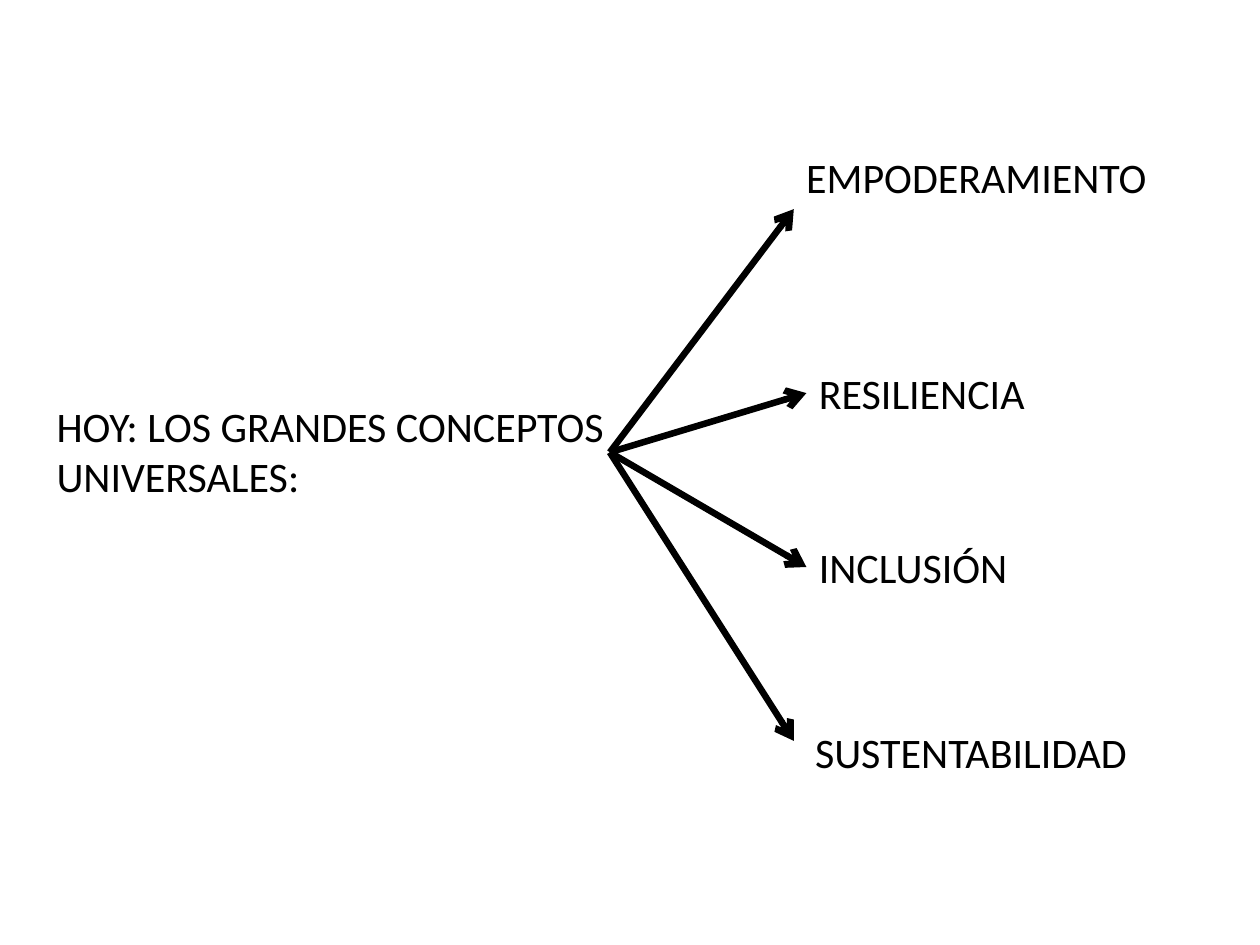
"""Build a slide that links a heading to four universal concepts."""
from pptx import Presentation
from pptx.dml.color import RGBColor
from pptx.enum.shapes import MSO_CONNECTOR as Conn
from pptx.enum.text import MSO_AUTO_SIZE as Fit
from pptx.oxml.ns import qn
from pptx.util import Inches, Pt
from lxml.etree import SubElement as Sub

BLACK = RGBColor(0, 0, 0)
LEFT = 1


class Board:
    def __init__(self, slide):
        self.slide = slide
        self.font = {"name": "Calibri", "size": Pt(24)}
        self.width = Pt(3.75)

    def text(self, words, x, y, w, h, wrap=False):
        box = self.slide.shapes.add_textbox(*map(Inches, (x, y, w, h)))
        frame = box.text_frame
        frame.word_wrap = wrap
        frame.auto_size = Fit.SHAPE_TO_FIT_TEXT
        run = frame.paragraphs[0].add_run()
        run.text = words
        for key, value in self.font.items():
            setattr(run.font, key, value)
        run.font.color.rgb = BLACK
        return box

    def arrow(self, start, end, goal=None):
        line = self.slide.shapes.add_connector(
            Conn.STRAIGHT, *map(Inches, start + end))
        if goal is not None:
            line.end_connect(goal, LEFT)
        line.line.width = self.width
        line.line.color.rgb = BLACK
        Sub(line.line._get_or_add_ln(), qn("a:tailEnd"), type="arrow")
        Sub(line._element.spPr, qn("a:effectLst"))


def main():
    deck = Presentation()
    deck.slide_width, deck.slide_height = Inches(10), Inches(7.5)
    board = Board(deck.slides.add_slide(deck.slide_layouts[6]))
    board.text("HOY: LOS GRANDES CONCEPTOS UNIVERSALES:",
               0.35, 3.13, 4.88, 0.91, wrap=True)
    ideas = [
        ("EMPODERAMIENTO", 6.3, 1.15, 3.36, (6.3, 1.66), False),
        ("RESILIENCIA", 6.4, 2.87, 2.28, (6.4, 3.12), True),
        ("INCLUSIÓN", 6.4, 4.25, 2.02, (6.4, 4.5), True),
        ("SUSTENTABILIDAD", 6.37, 5.72, 3.28, (6.3, 5.88), False),
    ]
    goals = [board.text(words, x, y, w, 0.5)
             for words, x, y, w, _, _ in ideas]
    for (*_, tip, joined), goal in zip(ideas, goals):
        board.arrow((4.84, 3.59), tip, goal if joined else None)
    deck.save("out.pptx")


if __name__ == "__main__":
    main()
